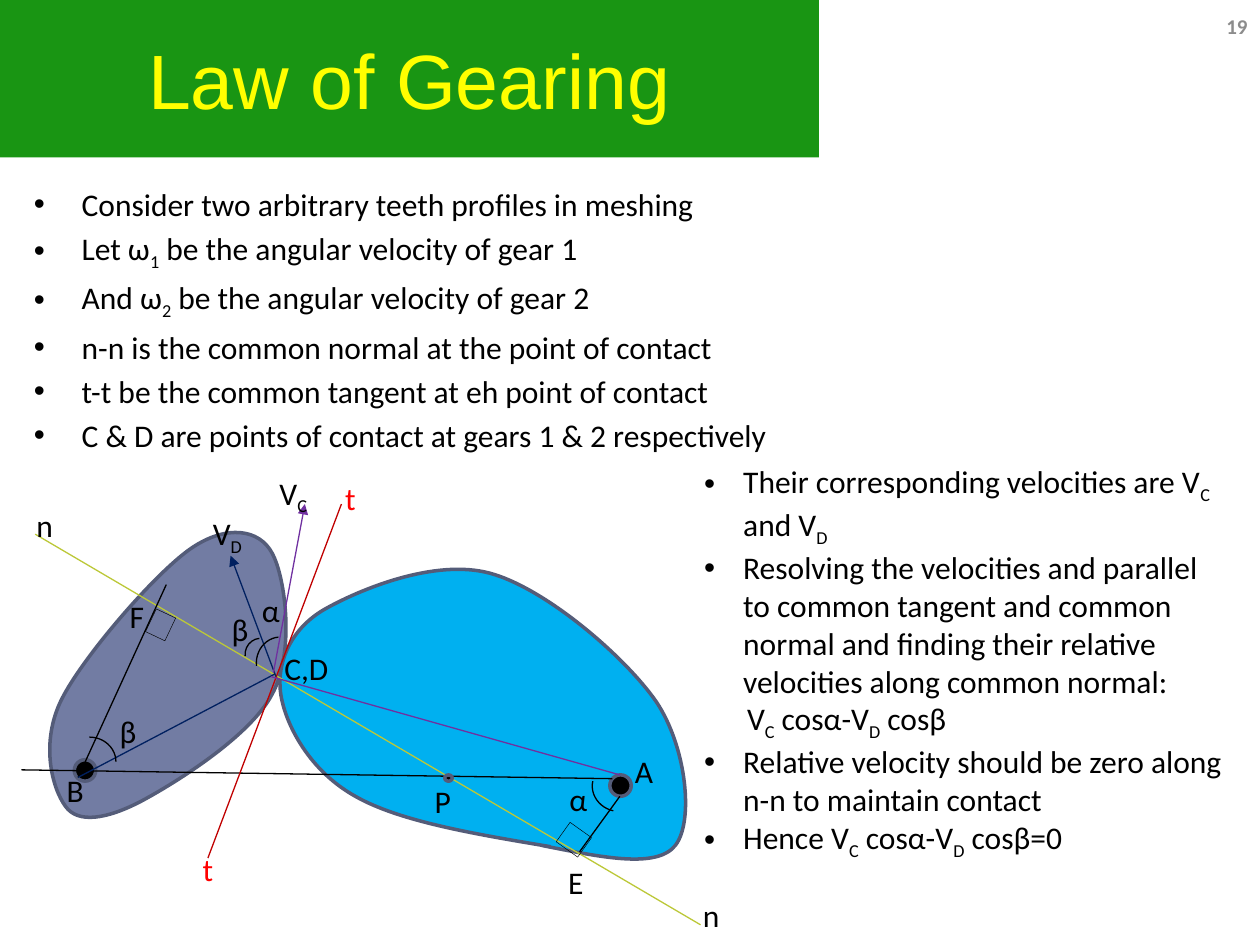
from math import cos, radians, sin

from lxml.etree import SubElement
from pptx import Presentation
from pptx.dml.color import RGBColor
from pptx.enum.shapes import MSO_CONNECTOR, MSO_SHAPE as Shape
from pptx.enum.text import MSO_ANCHOR as Anchor, PP_ALIGN as Align
from pptx.oxml.ns import qn
from pptx.util import Inches, Pt

THEME = {
    "green": "199513", "yellow": "FFFF00", "black": "000000", "grey": "8C8C8C",
    "gear 1": "727CA3", "gear 2": "00B0F0", "outline": "545C79", "red": "FF0000",
    "normal": "BCC838", "tangent": "C00000", "navy": "002060", "purple": "7030A0",
    "title font": "Arial", "body font": "Calibri",
    "title size": 44, "body size": 18, "number size": 12,
    "outline width": 2, "line width": 0.75, "thin width": 0.25,
}

# Text between bars is subscript: "V|C| cos" sets C below the line.
DEFINITIONS = [
    "Consider two arbitrary teeth profiles in meshing",
    "Let ω|1| be the angular velocity of gear 1",
    "And ω|2| be the angular velocity of gear 2",
    "n-n is the common normal at the point of contact",
    "t-t be the common tangent at eh point of contact",
    "C & D are points of contact at gears 1 & 2 respectively",
]
FORMULA = "V|C| cosα-V|D| cosβ"
DERIVATION = [
    "Their corresponding velocities are V|C| and V|D",
    "Resolving the velocities and parallel to common tangent and common normal "
    "and finding their relative velocities along common normal:",
    FORMULA,
    "Relative velocity should be zero along n-n to maintain contact",
    "Hence " + FORMULA + "=0",
]

# Fill, frame, rotation, start point, then (control, control, end) for each curve;
# the points are where they show on the slide, after rotation.
GEARS = [
    ("gear 1", (0.17, 4.48, 2.3, 1.73), 337.8, (1.12, 6.36), [
        ((1.4, 6.21), (1.99, 5.84), (2.16, 5.51)),
        ((2.34, 5.19), (2.27, 4.59), (2.16, 4.39)),
        ((2.06, 4.2), (1.8, 4.16), (1.52, 4.35)),
        ((1.24, 4.54), (0.66, 5.21), (0.49, 5.55)),
        ((0.32, 5.89), (0.41, 6.25), (0.52, 6.4)),
        ((0.62, 6.54), (0.85, 6.5), (1.12, 6.36))]),
    ("gear 2", (2.3, 4.49, 3.03, 2.55), 349.8, (4.3, 6.71), [
        ((4.76, 6.8), (5.21, 6.9), (5.36, 6.71)),
        ((5.51, 6.52), (5.45, 5.93), (5.21, 5.57)),
        ((4.96, 5.21), (4.33, 4.67), (3.89, 4.55)),
        ((3.45, 4.43), (2.85, 4.68), (2.57, 4.84)),
        ((2.3, 5), (2.19, 5.27), (2.23, 5.52)),
        ((2.27, 5.76), (2.46, 6.12), (2.82, 6.32)),
        ((3.17, 6.52), (3.77, 6.62), (4.37, 6.72))]),
]
PIVOTS = [(0.59, 6.03, 0.17, 0.17), (4.84, 6.15, 0.17, 0.17)]
PITCH_POINT = (3.53, 6.15, 0.06, 0.05)
# Start, end, colour, arrowhead at the end
LINES = [
    ((0.17, 6.11), (4.86, 6.18), "black", False),
    ((0.28, 4.24), (5.56, 7.34), "normal", False),
    ((0.62, 6.17), (1.32, 4.64), "black", False),
    ((4.92, 6.32), (4.6, 6.76), "black", False),
    ((2.71, 4), (1.65, 6.81), "tangent", False),
    ((0.62, 6.17), (2.18, 5.35), "navy", False),
    ((2.19, 5.37), (1.83, 4.41), "navy", True),
    ((4.92, 6.15), (2.15, 5.37), "purple", False),
    ((2.17, 5.34), (2.42, 4), "purple", True),
]
# Place, then rotation in degrees
ANGLE_ARCS = [
    ((0.5, 5.85, 0.42, 0.39), 0),
    ((4.7, 6.05, 0.42, 0.39), 192.5),
    ((1.94, 5.07, 0.26, 0.25), 264.8),
    ((2.02, 5.07, 0.42, 0.39), 264.5),
]
RIGHT_ANGLES = [
    ((1.19, 4.86, 0.17, 0.2), 25.3),
    ((4.45, 6.57, 0.21, 0.19), 35.5),
]
LABEL_WIDTH, LABEL_HEIGHT = 0.32, 0.4
WIDE_LABELS = {"V|D": 0.51, "V|C": 0.46, "C,D": 1.04}
LABELS = [
    ("n", 5.48, 7.06), ("n", 0.19, 3.97), ("t", 2.64, 3.75), ("t", 1.51, 6.7),
    ("V|D", 1.59, 4.03), ("V|C", 2.12, 3.71), ("A", 4.94, 5.92), ("E", 4.41, 6.8),
    ("P", 3.35, 6.16), ("C,D", 2.16, 5.1), ("B", 0.43, 6.07), ("F", 0.93, 4.69),
    ("α", 4.42, 6.14), ("β", 0.85, 5.6), ("β", 1.74, 4.79), ("α", 1.98, 4.64),
]


def color(name):
    return RGBColor.from_string(THEME[name])


def paint(shape, fill, line, width):
    shape.shadow.inherit = False
    if fill:
        shape.fill.solid()
        shape.fill.fore_color.rgb = color(fill)
    else:
        shape.fill.background()
    if line:
        shape.line.color.rgb = color(line)
        shape.line.width = Pt(THEME[width])
    else:
        shape.line.fill.background()


def add_figure(page, kind, place, fill=None, line=None, width=None, rotation=0):
    shape = page.shapes.add_shape(kind, *map(Inches, place))
    shape.rotation = rotation
    paint(shape, fill, line, width)
    return shape


def write(para, text, ink="black", role="body", align=Align.LEFT, bold=False):
    para.alignment = align
    font = para.font
    font.name = THEME["title font" if role == "title" else "body font"]
    font.size = Pt(THEME[role + " size"])
    font.color.rgb = color(ink)
    font.bold = bold
    for index, part in enumerate(text.split("|")):
        span = para.add_run()
        span.text = part
        if index % 2:
            span._r.get_or_add_rPr().set("baseline", "-25000")


def set_indent(para, left, bulleted):
    props = para._p.get_or_add_pPr()
    props.set("marL", str(Inches(left)))
    props.set("indent", str(-Inches(left) if bulleted else 0))
    if bulleted:
        SubElement(props, qn("a:buFont"), typeface="Arial")
        SubElement(props, qn("a:buChar"), char="•")


def add_text_box(page, place):
    box = page.shapes.add_textbox(*map(Inches, place))
    box.text_frame.word_wrap = True
    return box.text_frame


def add_list(page, place, items, indent, gap=0):
    frame = add_text_box(page, place)
    for index, item in enumerate(items):
        para = frame.add_paragraph() if index else frame.paragraphs[0]
        if item == FORMULA:
            set_indent(para, indent + 0.03, False)
        else:
            set_indent(para, indent, True)
        if index:
            para.space_before = Pt(gap)
        write(para, item)


def add_gear(page, fill, frame, rotation, start, curves):
    """Draw a closed outline of cubic curves inside a rotated frame."""
    left, top, width, height = frame
    corners = [(left + width, top), (left + width, top + height), (left, top + height)]
    builder = page.shapes.build_freeform(Inches(left), Inches(top))
    builder.add_line_segments([tuple(map(Inches, corner)) for corner in corners])
    gear = builder.convert_to_shape()
    gear.rotation = rotation
    paint(gear, fill, "outline", "outline width")

    outline = gear._element.find(".//" + qn("a:path"))
    for step in list(outline):
        outline.remove(step)
    turn = radians(-rotation)

    def add_step(tag, points):
        step = SubElement(outline, qn(tag))
        for x, y in points:
            across, down = x - left - width / 2, y - top - height / 2
            local_x = width / 2 + across * cos(turn) - down * sin(turn)
            local_y = height / 2 + across * sin(turn) + down * cos(turn)
            SubElement(step, qn("a:pt"), x=str(Inches(local_x)), y=str(Inches(local_y)))

    add_step("a:moveTo", [start])
    for curve in curves:
        add_step("a:cubicBezTo", curve)
    if curves[-1][-1] == start:
        SubElement(outline, qn("a:close"))


def add_line(page, start, end, ink, arrow):
    line = page.shapes.add_connector(MSO_CONNECTOR.STRAIGHT, *map(Inches, start + end))
    line.line.color.rgb = color(ink)
    line.line.width = Pt(THEME["line width"])
    if arrow:
        SubElement(line.line._get_or_add_ln(), qn("a:tailEnd"), type="triangle")
    SubElement(line._element.spPr, qn("a:effectLst"))


def draw_diagram(diagram):
    for gear in GEARS:
        add_gear(diagram, *gear)
    for place in PIVOTS:
        add_figure(diagram, Shape.OVAL, place, "black", "outline", "outline width")
    for line in LINES:
        add_line(diagram, *line)
    add_figure(diagram, Shape.OVAL, PITCH_POINT, "black", "outline", "outline width")
    for text, left, top in LABELS:
        place = (left, top, WIDE_LABELS.get(text, LABEL_WIDTH), LABEL_HEIGHT)
        para = add_text_box(diagram, place).paragraphs[0]
        write(para, text, "red" if text == "t" else "black")
    for place, turn in ANGLE_ARCS:
        add_figure(diagram, Shape.ARC, place, None, "black", "line width", turn)
    for place, turn in RIGHT_ANGLES:
        add_figure(diagram, Shape.RECTANGLE, place, None, "black", "thin width", turn)


def main():
    deck = Presentation()
    deck.slide_width, deck.slide_height = Inches(10), Inches(7.5)
    page = deck.slides.add_slide(deck.slide_layouts[6])

    title = add_figure(page, Shape.RECTANGLE, (0, 0, 6.5, 1.25), "green").text_frame
    title.vertical_anchor = Anchor.MIDDLE
    write(title.paragraphs[0], "Law of Gearing", "yellow", "title", Align.CENTER)
    add_list(page, (0.17, 1.42, 9.83, 4.95), DEFINITIONS, 0.38, gap=3.6)
    number = add_text_box(page, (9.08, 0, 0.92, 0.42))
    number.vertical_anchor = Anchor.MIDDLE
    write(number.paragraphs[0], "19", "grey", "number", Align.RIGHT, bold=True)
    add_list(page, (5.49, 3.62, 4.35, 3.74), DERIVATION, 0.31)
    draw_diagram(page.shapes.add_group_shape())

    deck.save("out.pptx")


if __name__ == "__main__":
    main()
